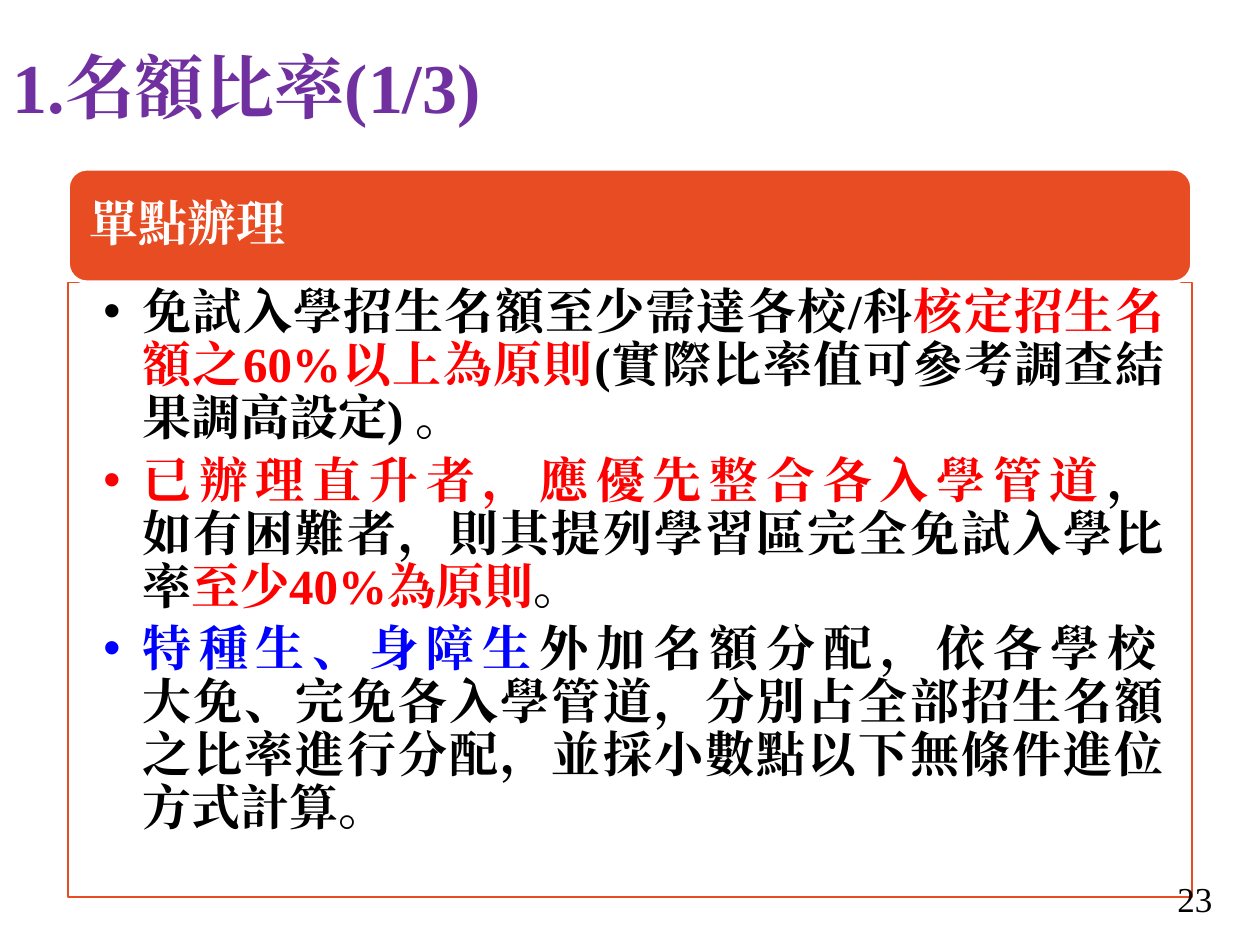
import pptx
import pptx.util
import pptx.dml.color
import pptx.enum.shapes
import pptx.enum.text
import pptx.oxml.ns
from lxml import etree

Inches, Pt = pptx.util.Inches, pptx.util.Pt
RGB = pptx.dml.color.RGBColor
ALIGN = pptx.enum.text.PP_ALIGN
ANCHOR = pptx.enum.text.MSO_ANCHOR

FONT = "Times New Roman"
COLORS = {"purple": "7030A0", "orange": "E84C22", "white": "FFFFFF",
          "black": "000000", "red": "FF0000", "blue": "0000FF"}


def add_text(paragraph, text, size, color, bold=True):
    """Append text in the slide font; a newline becomes a line break."""
    for number, line in enumerate(text.split("\n")):
        if number:
            paragraph.add_line_break()
        run = paragraph.add_run()
        run.text = line
        for name, value in {"name": FONT, "size": Pt(size), "bold": bold}.items():
            setattr(run.font, name, value)
        run.font.color.rgb = RGB.from_string(COLORS[color])
        east_asian = etree.SubElement(run.font._element, pptx.oxml.ns.qn("a:ea"))
        east_asian.set("typeface", FONT)


def place(part, box, anchor, insets=(0.1, 0.05, 0.1, 0.05)):
    """Set position, anchor and insets, and return the text frame."""
    for name, value in zip(("left", "top", "width", "height"), box):
        setattr(part, name, Inches(value))
    frame = part.text_frame
    frame.word_wrap = True
    frame.auto_size = pptx.enum.text.MSO_AUTO_SIZE.NONE
    frame.vertical_anchor = anchor
    for side, value in zip(("left", "top", "right", "bottom"), insets):
        setattr(frame, "margin_" + side, Inches(value))
    return frame


presentation = pptx.Presentation()
presentation.slide_width, presentation.slide_height = Inches(10), Inches(7.5)
slide = presentation.slides.add_slide(presentation.slide_layouts[1])

# Title
heading = place(slide.shapes.title, (0, 0, 10, 1.45), ANCHOR.MIDDLE).paragraphs[0]
heading.alignment = ALIGN.LEFT
heading.line_spacing = 0.9
add_text(heading, "1.名額比率(1/3)", 40, "purple")

# Framed list of rules
rules = [
    [("免試入學招生名額至少需達各校/科", "black"),
     ("核定招生名額之60%以上為原則", "red"),
     ("(實際比率值可參考調查結果調高設定) 。", "black")],
    [("已辦理直升者，應優先整合各入學管道", "red"),
     ("，\n如有困難者，則其提列學習區完全免試入學比率", "black"),
     ("至少40%為原則", "red"),
     ("。", "black")],
    [("特種生、身障生", "blue"),
     ("外加名額分配，依各學校\n大免、完免各入學管道，分別占全部招生名額之比率進行分配，"
      "並採小數點以下無條件進位方式計算。", "black")],
]
rule_list = slide.placeholders[1]
rule_list.line.color.rgb = RGB.from_string(COLORS["orange"])
rule_list.line.width = Pt(0.75)
rule_frame = place(rule_list, (0.54, 2.24, 8.92, 4.88), ANCHOR.TOP,
                   (0.28, 0.04, 0.22, 0.04))
rule_format = {"alignment": ALIGN.JUSTIFY, "line_spacing": 0.9,
               "space_before": Pt(0), "space_after": Pt(5.6)}
for index, rule in enumerate(rules):
    paragraph = rule_frame.add_paragraph() if index else rule_frame.paragraphs[0]
    for name, value in rule_format.items():
        setattr(paragraph, name, value)
    properties = paragraph._p.get_or_add_pPr()
    properties.set("marL", str(Inches(0.31)))
    properties.set("indent", str(-Inches(0.31)))
    bullet = etree.SubElement(properties, pptx.oxml.ns.qn("a:buChar"))
    bullet.set("char", "•")
    for text, color in rule:
        add_text(paragraph, text, 28, color)

# Section banner
banner = slide.shapes.add_shape(
    pptx.enum.shapes.MSO_SHAPE.ROUNDED_RECTANGLE, 0, 0, 0, 0)
banner.shadow.inherit = False
banner.fill.solid()
banner.fill.fore_color.rgb = RGB.from_string(COLORS["orange"])
banner.line.color.rgb = RGB.from_string(COLORS["white"])
banner.line.width = Pt(2)
section = place(banner, (0.54, 1.34, 8.92, 0.9), ANCHOR.MIDDLE,
                (0.13, 0.12, 0.13, 0.12)).paragraphs[0]
section.alignment = ALIGN.LEFT
section.line_spacing = 0.9
add_text(section, "單點辦理", 28, "white")

# Page number
page_number = slide.shapes.add_textbox(0, 0, 0, 0)
page = place(page_number, (7.47, 6.93, 2.25, 0.4), ANCHOR.MIDDLE).paragraphs[0]
page.alignment = ALIGN.RIGHT
add_text(page, "23", 20, "black", bold=False)

presentation.save("out.pptx")
